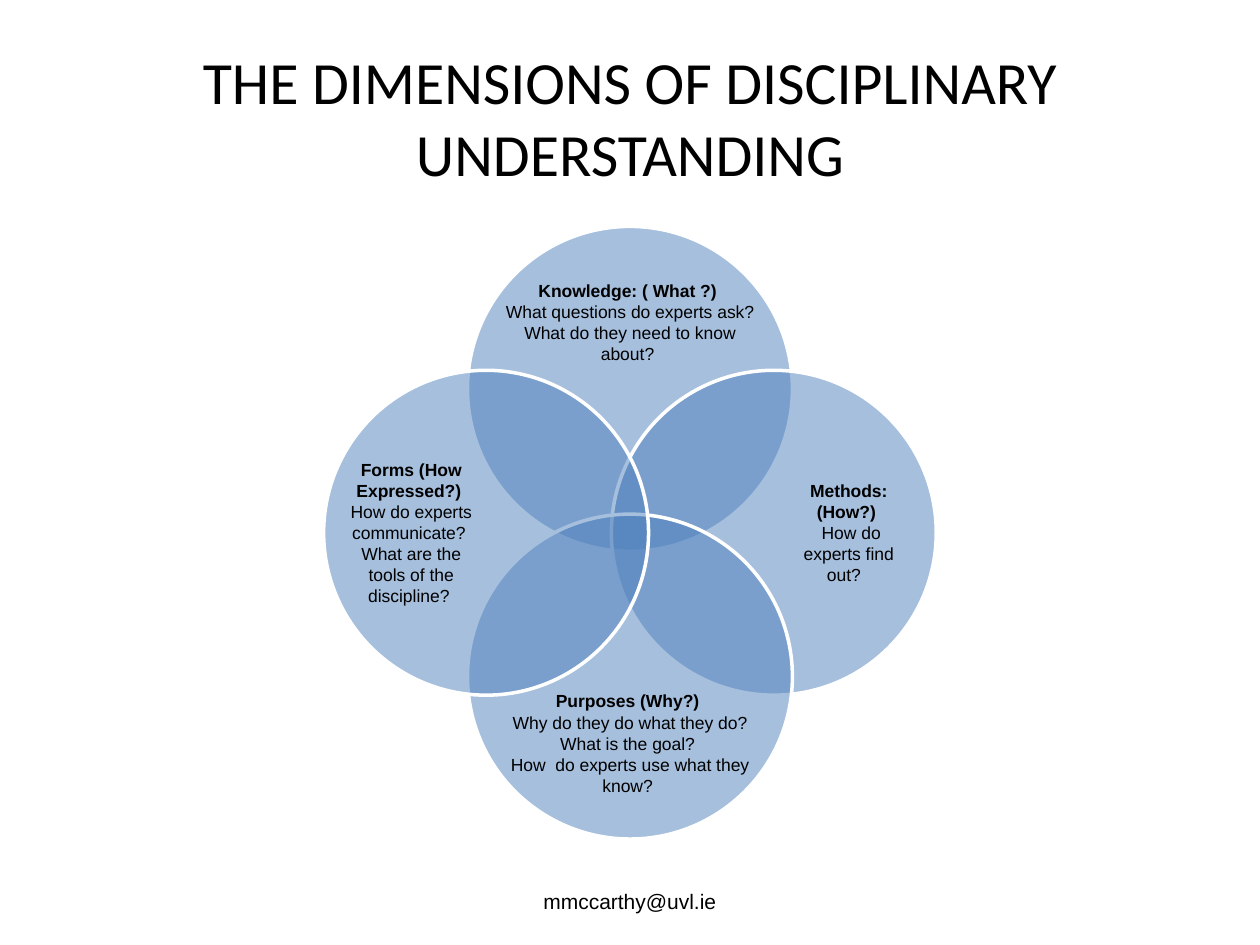
from lxml.etree import SubElement
from pptx import Presentation
from pptx.dml.color import RGBColor
from pptx.enum.shapes import MSO_SHAPE as Shape
from pptx.enum.text import MSO_ANCHOR as Anchor, PP_ALIGN as Align
from pptx.oxml.ns import qn
from pptx.util import Cm, Pt

COLORS = {"circle": "4F81BD", "outline": "FFFFFF", "text": "000000"}
HEADING = "THE DIMENSIONS OF DISCIPLINARY UNDERSTANDING"
FOOTER = "mmccarthy@uvl.ie"
DIMENSIONS = [
    ((0, -1), ["Knowledge: ( What ?) ",
               "What questions do experts ask? ",
               "What do they need to know about? "]),
    ((1, 0), ["Methods: (How?) ",
              " How do experts find out?  "]),
    ((0, 1), ["Purposes (Why?) ",
              "Why do they do what they do? What is the goal? ",
              "How  do experts use what they know? "]),
    ((-1, 0), ["Forms (How Expressed?) ",
               "How do experts communicate? ",
               "What are the tools of the discipline? "]),
]

CENTER_X, CENTER_Y = 12.7, 10.74
DIAMETER, CIRCLE_OFFSET = 6.55, 2.9
WIDE_LABEL = (5.03, 2.08, 4.24)
TALL_LABEL = (2.51, 5.03, 4.41)


def color(name):
    return RGBColor.from_string(COLORS[name])


def centered(x, y, width, height):
    return Cm(x - width / 2), Cm(y - height / 2), Cm(width), Cm(height)


def add_text(slide, box, lines, font, size, inset=None, bold_first=False):
    frame = slide.shapes.add_textbox(*box).text_frame
    frame.word_wrap = True
    frame.vertical_anchor = Anchor.MIDDLE
    if inset is not None:
        frame.margin_left = frame.margin_right = Cm(inset)
        frame.margin_top = frame.margin_bottom = Cm(inset)
    frame.text = "\n".join(lines)
    for number, paragraph in enumerate(frame.paragraphs):
        paragraph.alignment = Align.CENTER
        paragraph.font.name = font
        paragraph.font.size = Pt(size)
        paragraph.font.bold = bold_first and number == 0
        paragraph.font.color.rgb = color("text")


def add_circle(slide, x, y):
    circle = slide.shapes.add_shape(
        Shape.OVAL, *centered(x, y, DIAMETER, DIAMETER))
    circle.shadow.inherit = False
    circle.fill.solid()
    circle.fill.fore_color.rgb = color("circle")
    tint = circle.fill._xPr.find(qn("a:solidFill"))[0]
    SubElement(tint, qn("a:alpha"), val="50000")
    circle.line.color.rgb = color("outline")
    circle.line.width = Pt(2)


def main():
    deck = Presentation()
    deck.slide_width, deck.slide_height = Cm(25.4), Cm(19.05)
    slide = deck.slides.add_slide(deck.slide_layouts[6])

    add_text(slide, centered(CENTER_X, 18.16, 8.05, 1.02), [FOOTER], "Arial", 12)
    add_text(slide, centered(CENTER_X, 2.35, 22.86, 3.18), [HEADING], "Calibri", 34.2)

    for (dx, dy), lines in DIMENSIONS:
        add_circle(slide, CENTER_X + dx * CIRCLE_OFFSET,
                   CENTER_Y + dy * CIRCLE_OFFSET)
        width, height, offset = TALL_LABEL if dx else WIDE_LABEL
        label = centered(CENTER_X + dx * offset, CENTER_Y + dy * offset,
                         width, height)
        add_text(slide, label, lines, "Arial", 10, inset=0, bold_first=True)

    deck.save("out.pptx")


if __name__ == "__main__":
    main()
